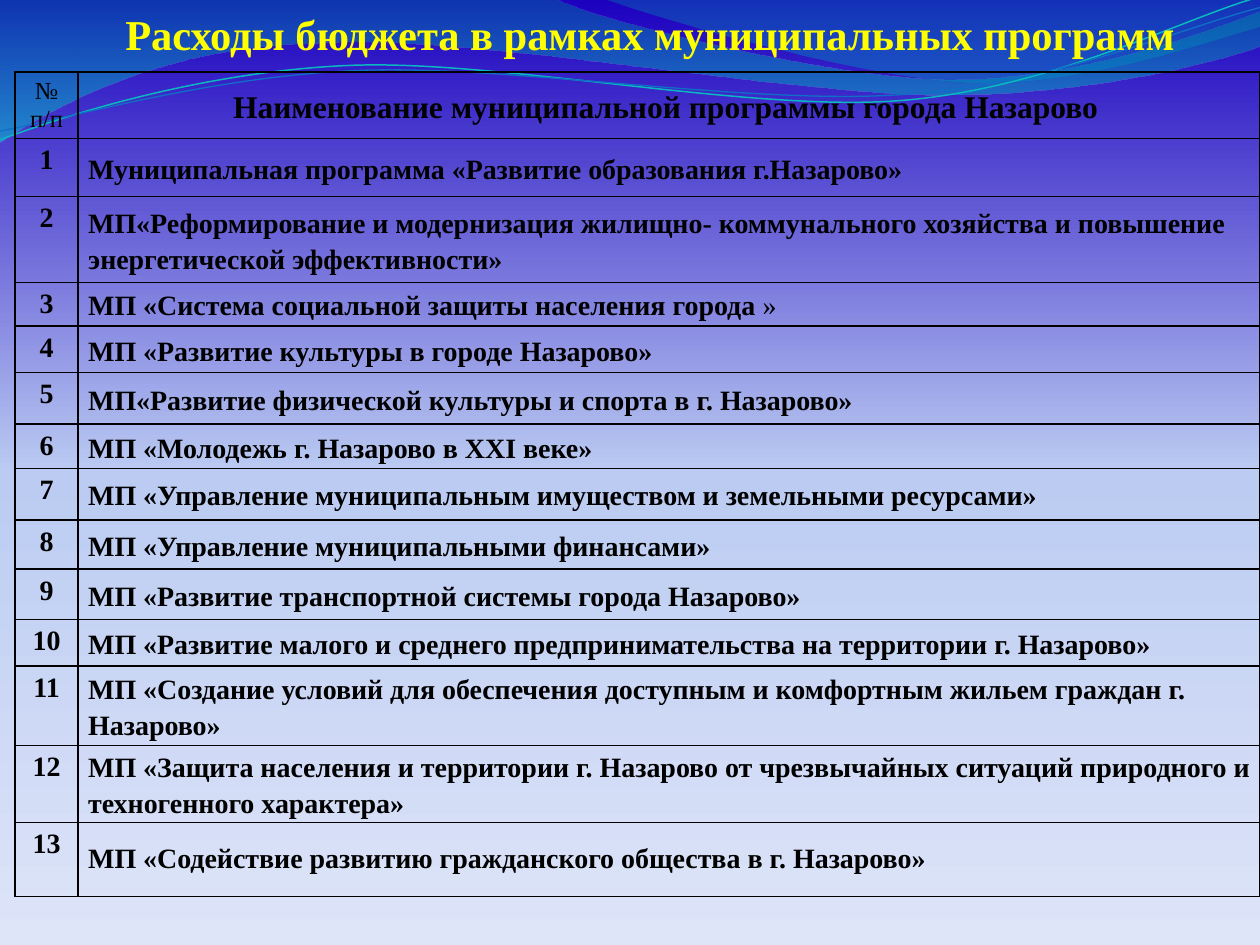
from lxml import etree
from pptx import Presentation
from pptx.dml.color import RGBColor
from pptx.enum.text import MSO_ANCHOR, PP_ALIGN
from pptx.oxml import parse_xml
from pptx.oxml.ns import nsdecls, qn
from pptx.util import Inches, Pt

FONT = "Times New Roman"
YELLOW = RGBColor(0xFF, 0xFF, 0x00)
BLACK = RGBColor(0x00, 0x00, 0x00)
TEAL = RGBColor(0x0A, 0xB8, 0xBF)
BLUE = RGBColor(0x0F, 0x6F, 0xC6)
BACKGROUND = [(0, RGBColor(0x1C, 0x01, 0xBF), 100),
              (50, RGBColor(0xBB, 0xCB, 0xF2), 100),
              (100, RGBColor(0xDE, 0xE5, 0xF8), 100)]
WIDE_WAVE = [(0, RGBColor(0x00, 0x74, 0xA1), 45),
             (100, RGBColor(0x00, 0xC6, 0xCF), 55)]
SMALL_WAVE = [(0, RGBColor(0x00, 0xA1, 0xA9), 30),
              (80, RGBColor(0x00, 0x8B, 0xBF), 45)]


def set_gradient(properties, stops):
    """Replace an empty fill by a top-to-bottom gradient of (position, colour, opacity)."""
    marks = "".join(
        f'<a:gs pos="{position * 1000}"><a:srgbClr val="{colour}">'
        f'<a:alpha val="{opacity * 1000}"/></a:srgbClr></a:gs>'
        for position, colour, opacity in stops)
    gradient = parse_xml(f'<a:gradFill {nsdecls("a")} rotWithShape="1"><a:gsLst>{marks}</a:gsLst>'
                         '<a:lin ang="5400000" scaled="0"/></a:gradFill>')
    properties.replace(properties.find(qn("a:noFill")), gradient)


def add_wave(page, points, closed):
    """Draw an outline; a pair is a corner, six numbers are a Bezier curve."""
    start, *segments = points
    builder = page.shapes.build_freeform(Inches(start[0]), Inches(start[1]))
    builder.add_line_segments([(Inches(s[-2]), Inches(s[-1])) for s in segments], close=closed)
    wave = builder.convert_to_shape()
    # Bend the straight segments that have control points
    lines = list(wave.element.iter(qn("a:lnTo")))
    for line, segment in zip(lines, segments):
        if len(segment) == 6:
            curve = etree.Element(qn("a:cubicBezTo"))
            for x, y in zip(segment[::2], segment[1::2]):
                etree.SubElement(curve, qn("a:pt"), x=str(Inches(x) - wave.left),
                                 y=str(Inches(y) - wave.top))
            line.getparent().replace(line, curve)
    wave.shadow.inherit = False
    wave.fill.background()
    wave.line.fill.background()
    return wave


deck = Presentation()
deck.slide_width, deck.slide_height = Inches(10), Inches(7.5)
page = deck.slides.add_slide(deck.slide_layouts[5])

# Background
page.background.fill.background()
set_gradient(page.element.find(".//" + qn("p:bgPr")), BACKGROUND)

# Filled waves along the top
filled_waves = [
    (WIDE_WAVE, [(0, 0), (4.4, -0.01), (4.76, 0.17, 6.64, 0.63, 7.58, 0.63),
                 (8.53, 0.63, 9.58, 0.26, 10, 0.09), (10.01, 0.36),
                 (9.83, 0.44, 8.7, 0.76, 7.46, 0.75), (6.22, 0.75, 3.82, 0.28, 2.57, 0.34),
                 (1.29, 0.36, 0.46, 0.83, -0.01, 1.13)]),
    (SMALL_WAVE, [(4.79, -0.01), (5.09, 0.11, 6.82, 0.62, 7.69, 0.65),
                  (8.56, 0.69, 9.61, 0.32, 10, 0.21), (10, 0)]),
]
for stops, points in filled_waves:
    wave = add_wave(page, points, closed=True)
    set_gradient(wave.element.spPr, stops)

# Thin wave lines
wave_lines = [
    (TEAL, 0.85, [(0, 1.11), (0.48, 0.93, 1.58, 0.57, 2.77, 0.52),
                  (3.95, 0.47, 5.93, 0.89, 7.13, 0.8), (8.33, 0.71, 9.38, 0.15, 9.98, -0.02)]),
    (BLUE, 0.75, [(0, 1.04), (0.47, 0.96, 1.64, 0.61, 2.83, 0.56),
                  (4.03, 0.51, 5.97, 0.84, 7.17, 0.75), (8.36, 0.67, 9.41, 0.21, 10, 0.06)]),
]
for colour, width, points in wave_lines:
    wave = add_wave(page, points, closed=False)
    wave.line.color.rgb = colour
    wave.line.width = Pt(width)

# Title, in front of the waves
title = page.shapes.title
title.element.getparent().append(title.element)
title.left, title.top, title.width, title.height = Inches(0.12), Inches(0), Inches(9.88), Inches(0.86)
frame = title.text_frame
frame.text = "Расходы бюджета в рамках муниципальных программ"
frame.word_wrap = True
frame.vertical_anchor = MSO_ANCHOR.BOTTOM
frame.margin_left, frame.margin_bottom = Inches(0.2), Inches(0.39)
frame.margin_top = frame.margin_right = 0
para = frame.paragraphs[0]
para.alignment = PP_ALIGN.CENTER
para.font.name, para.font.size, para.font.bold = FONT, Pt(24.3), True
para.font.color.rgb = YELLOW

# Programme table
programmes = [
    "Муниципальная программа «Развитие образования г.Назарово»",
    "МП«Реформирование и модернизация жилищно- коммунального хозяйства и повышение энергетической эффективности»",
    "МП «Система социальной защиты населения города »",
    "МП «Развитие культуры в городе Назарово»",
    "МП«Развитие физической культуры и спорта в г. Назарово»",
    "МП «Молодежь г. Назарово в XXI веке»",
    "МП «Управление муниципальным имуществом и земельными ресурсами»",
    "МП «Управление муниципальными финансами»",
    "МП «Развитие транспортной системы города Назарово»",
    "МП «Развитие малого и среднего предпринимательства на территории г. Назарово»",
    "МП «Создание условий для обеспечения доступным и комфортным жильем граждан г. Назарово»",
    "МП «Защита населения и территории г. Назарово от чрезвычайных ситуаций природного и техногенного характера»",
    "МП «Содействие развитию гражданского общества в г. Назарово»",
]
rows = [("№ п/п", "Наименование муниципальной программы города Назарово ")]
rows += [(str(number), name) for number, name in enumerate(programmes, 1)]
heights = [0.53, 0.46, 0.68, 0.34, 0.37, 0.41, 0.35, 0.41, 0.39, 0.4, 0.37, 0.63, 0.61, 0.59]
widths = [0.5, 9.38]

table = page.shapes.add_table(len(rows), 2, Inches(0.12), Inches(0.57),
                              Inches(sum(widths)), Inches(sum(heights))).table
table.first_row = table.horz_banding = False
for column, width in zip(table.columns, widths):
    column.width = Inches(width)

for r, (texts, height) in enumerate(zip(rows, heights)):
    table.rows[r].height = Inches(height)
    for c, text in enumerate(texts):
        cell = table.cell(r, c)
        cell.fill.background()
        para = cell.text_frame.paragraphs[0]
        if text.endswith(" »"):  # the closing quote is not bold
            para.add_run().text = text[:-1]
            span = para.add_run()
            span.text, span.font.bold = text[-1], False
        else:
            para.text = text
        header = r == 0
        para.alignment = PP_ALIGN.CENTER if header or c == 0 else PP_ALIGN.LEFT
        para.font.name = FONT
        para.font.size = Pt((14, 18)[c] if header else 16)
        para.font.bold = not (header and c == 0)
        para.font.color.rgb = BLACK
        if c == 1:
            cell.vertical_anchor = MSO_ANCHOR.MIDDLE
            cell.margin_left, cell.margin_right = Inches(0.08), Inches(0.07)
            cell.margin_top = cell.margin_bottom = 0
            if r < len(programmes):
                para.line_spacing = 1.15
        # Borders come before the fill
        properties = cell._tc.get_or_add_tcPr()
        for place, side in enumerate(("lnL", "lnR", "lnT", "lnB")):
            border = etree.Element(qn("a:" + side), w=str(Pt(1)))
            fill = etree.SubElement(border, qn("a:solidFill"))
            etree.SubElement(fill, qn("a:srgbClr"), val=str(BLACK))
            properties.insert(place, border)

deck.save("out.pptx")
